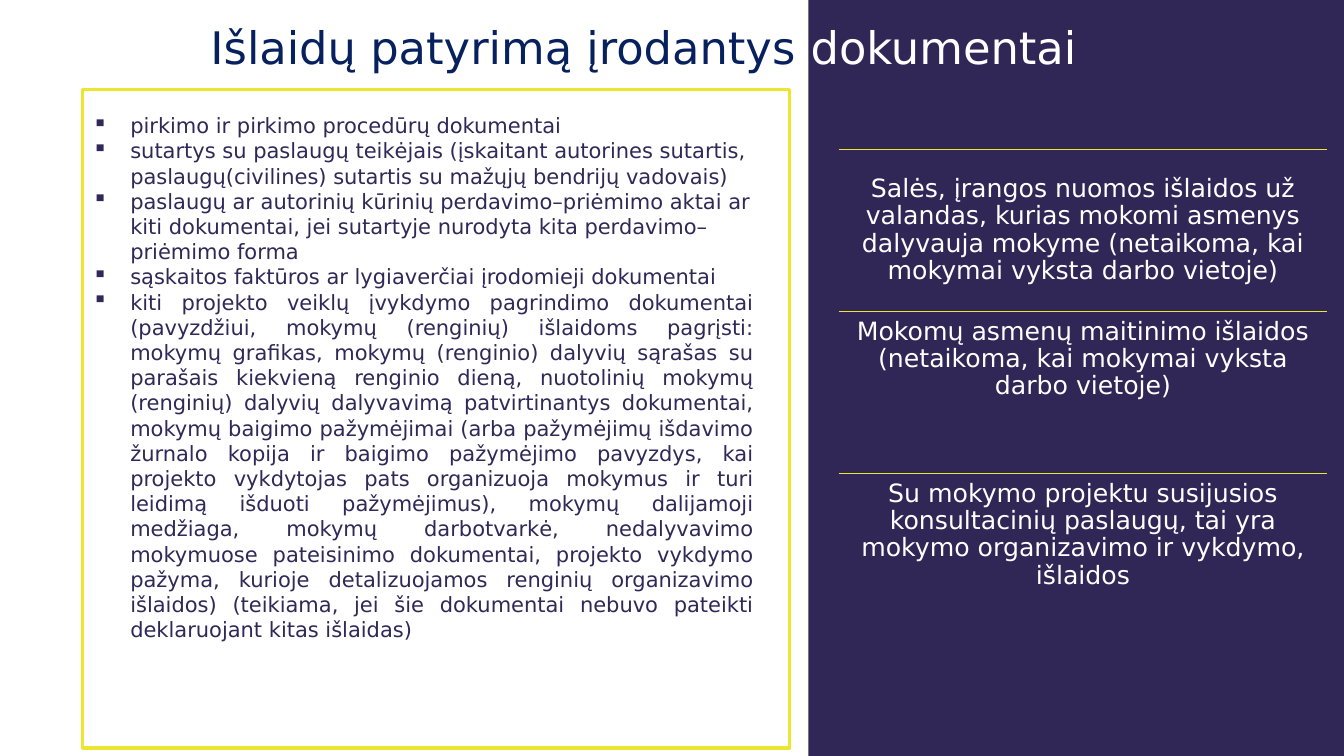
from lxml import etree
from pptx import Presentation
from pptx import util as u
from pptx.dml.color import RGBColor
from pptx.enum import shapes, text
from pptx.oxml.ns import qn

FONT = "DejaVu Sans"
PANEL = RGBColor(0x30, 0x27, 0x57)
BODY = RGBColor(0x30, 0x28, 0x57)
NAVY = RGBColor(0x07, 0x21, 0x5E)
WHITE = RGBColor(0xFF, 0xFF, 0xFF)
YELLOW = RGBColor(0xED, 0xE6, 0x30)

DOCUMENTS = [
    "pirkimo ir pirkimo procedūrų dokumentai",
    "sutartys su paslaugų teikėjais (įskaitant autorines sutartis, "
    "paslaugų(civilines) sutartis su mažųjų bendrijų vadovais)",
    "paslaugų ar autorinių kūrinių perdavimo–priėmimo aktai ar kiti dokumentai, "
    "jei sutartyje nurodyta kita perdavimo–priėmimo forma",
    "sąskaitos faktūros ar lygiaverčiai įrodomieji dokumentai",
]
OTHER_DOCUMENTS = (
    "kiti projekto veiklų įvykdymo pagrindimo dokumentai (pavyzdžiui, mokymų "
    "(renginių) išlaidoms pagrįsti: mokymų grafikas, mokymų (renginio) dalyvių "
    "sąrašas su parašais kiekvieną renginio dieną, nuotolinių mokymų (renginių) "
    "dalyvių dalyvavimą patvirtinantys dokumentai, mokymų baigimo pažymėjimai "
    "(arba pažymėjimų išdavimo žurnalo kopija ir baigimo pažymėjimo pavyzdys, kai "
    "projekto vykdytojas pats organizuoja mokymus ir turi leidimą išduoti "
    "pažymėjimus), mokymų dalijamoji medžiaga, mokymų darbotvarkė, nedalyvavimo "
    "mokymuose pateisinimo dokumentai, projekto vykdymo pažyma, kurioje "
    "detalizuojamos renginių organizavimo išlaidos) (teikiama, jei šie dokumentai "
    "nebuvo pateikti deklaruojant kitas išlaidas)"
)
COSTS = [
    ("Salės, įrangos nuomos išlaidos už valandas, kurias mokomi asmenys dalyvauja "
     "mokyme (netaikoma, kai mokymai vyksta darbo vietoje)", text.MSO_ANCHOR.MIDDLE),
    ("Mokomų asmenų maitinimo išlaidos (netaikoma, kai mokymai vyksta darbo "
     "vietoje)", text.MSO_ANCHOR.TOP),
    ("Su mokymo projektu susijusios konsultacinių paslaugų, tai yra mokymo "
     "organizavimo ir vykdymo, išlaidos", text.MSO_ANCHOR.TOP),
]
COST_LEFT, COST_TOP, COST_WIDTH, COST_HEIGHT = 599, 106.6, 349.2, 115.9


def add_block(page, kind, left, top, width, height):
    block = page.shapes.add_shape(kind, u.Pt(left), u.Pt(top), u.Pt(width), u.Pt(height))
    block.shadow.inherit = False
    return block


def add_box(page, left, top, width, height):
    box = page.shapes.add_textbox(u.Pt(left), u.Pt(top), u.Pt(width), u.Pt(height))
    box.text_frame.word_wrap = True
    return box.text_frame


def add_span(para, words, size, color):
    span = para.add_run()
    span.text = words
    span.font.name = FONT
    span.font.size = u.Pt(size)
    span.font.color.rgb = color


def add_bullet(para, indent):
    properties = para._p.get_or_add_pPr()
    properties.set("marL", str(u.Pt(indent)))
    properties.set("indent", str(-u.Pt(indent)))
    etree.SubElement(properties, qn("a:buChar")).set("char", "▪")


def add_rule(page, left, top, width):
    rule = page.shapes.add_connector(
        shapes.MSO_CONNECTOR.STRAIGHT,
        u.Pt(left), u.Pt(top), u.Pt(left + width), u.Pt(top))
    rule.line.color.rgb = YELLOW
    rule.line.width = u.Pt(1)
    etree.SubElement(rule._element.spPr, qn("a:effectLst"))


def add_cost(page, top, words, anchor):
    add_rule(page, COST_LEFT, top, COST_WIDTH)
    frame = add_box(page, COST_LEFT, top, COST_WIDTH, COST_HEIGHT)
    frame.vertical_anchor = anchor
    frame.margin_left = frame.margin_right = u.Pt(5)
    frame.margin_top = frame.margin_bottom = u.Pt(5)
    para = frame.paragraphs[0]
    para.alignment = text.PP_ALIGN.CENTER
    para.line_spacing = 0.9
    add_span(para, words, 18, WHITE)


def add_documents(page):
    frame = add_box(page, 59, 77, 486.7, 406.8)
    for index, words in enumerate(DOCUMENTS + [OTHER_DOCUMENTS]):
        para = frame.add_paragraph() if index else frame.paragraphs[0]
        add_bullet(para, 27)
        if words == OTHER_DOCUMENTS:
            para.alignment = text.PP_ALIGN.JUSTIFY
        add_span(para, words, 15, BODY)


def main():
    deck = Presentation()
    deck.slide_width, deck.slide_height = u.Pt(960), u.Pt(540)
    page = deck.slides.add_slide(deck.slide_layouts[6])

    # Dark side panel
    panel = add_block(page, shapes.MSO_SHAPE.RECTANGLE, 577.5, 0, 382.5, 540)
    panel.fill.solid()
    panel.fill.fore_color.rgb = PANEL
    panel.line.fill.background()

    # Title across both halves
    title = add_box(page, 143.3, 10.8, 763.2, 46).paragraphs[0]
    add_span(title, "Išlaidų patyrimą įrodantys ", 32, NAVY)
    add_span(title, "dokumentai", 32, WHITE)

    # Framed list of documents
    border = add_block(page, shapes.MSO_SHAPE.ROUNDED_RECTANGLE, 59, 64, 505, 470.3)
    border.adjustments[0] = 0
    border.fill.background()
    border.line.color.rgb = YELLOW
    border.line.width = u.Pt(2.25)
    add_documents(page)

    # Cost types under yellow rules
    for index, (words, anchor) in enumerate(COSTS):
        add_cost(page, COST_TOP + index * COST_HEIGHT, words, anchor)

    deck.save("out.pptx")


if __name__ == "__main__":
    main()
